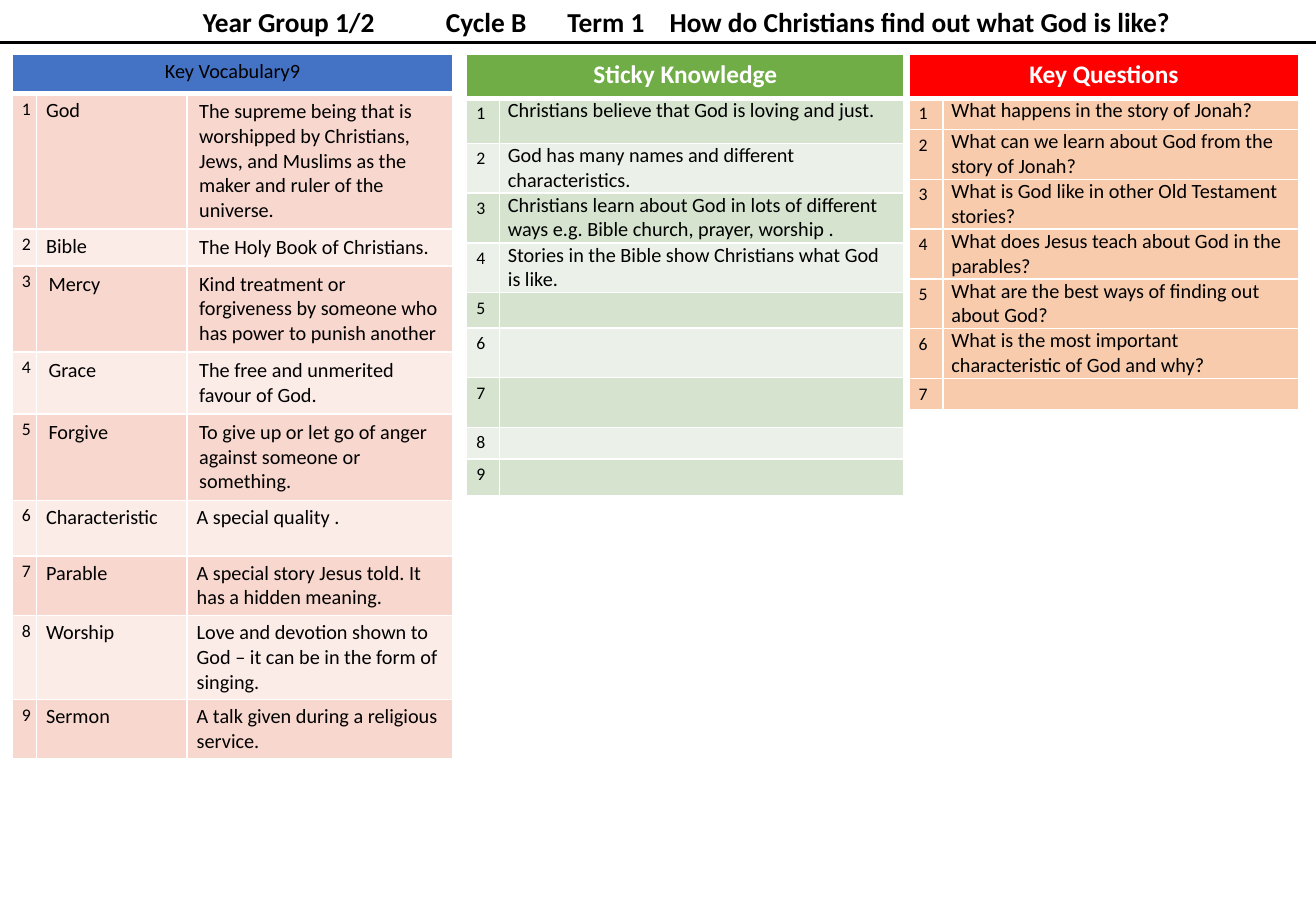
"""Build a knowledge organiser slide with one title and three numbered tables."""
import dataclasses
import itertools

import lxml.etree
import pptx
import pptx.dml.color
import pptx.enum.shapes
import pptx.enum.text
import pptx.oxml.ns
import pptx.util

COLS, ROWS = 1083, 750
LEFT, MID = pptx.enum.text.PP_ALIGN.LEFT, pptx.enum.text.PP_ALIGN.CENTER


@dataclasses.dataclass(frozen=True)
class Theme:
    font: str = "Calibri"
    black: str = "000000"
    white: str = "FFFFFF"
    blue: str = "4472C4"
    green: str = "70AD47"
    red: str = "FF0000"
    pinks: tuple = ("F8D7CE", "FCECE8")
    greens: tuple = ("D5E3CF", "EBF1E9")
    peach: tuple = ("F8CBAD",)
    title: float = 16.2
    head: float = 15
    body: float = 12
    digit: float = 10.5
    rule: float = 1.5
    tight: tuple = (8, 4)
    roomy: tuple = (10, 5)
    flush: tuple = (7, 0)


THEME = Theme()

WORDS = [
    ("God", "The supreme being that is worshipped by Christians, Jews, and "
     "Muslims as the maker and ruler of the universe."),
    ("Bible", "The Holy Book of Christians."),
    ("Mercy", "Kind treatment or forgiveness by someone who has power to punish another"),
    ("Grace", "The free and unmerited favour of God."),
    ("Forgive", "To give up or let go of anger against someone or something."),
    ("Characteristic", "A special quality ."),
    ("Parable", "A special story Jesus told. It has a hidden meaning."),
    ("Worship", "Love and devotion shown to God – it can be in the form of singing."),
    ("Sermon", "A talk given during a religious service."),
]
FACTS = [
    ("Christians believe that God is loving and just.",),
    ("God has many names and different characteristics.",),
    ("Christians learn about God in lots of different ways e.g. Bible church, "
     "prayer, worship .",),
    ("Stories in the Bible show Christians what God is like.",),
] + [("",)] * 5
ASKS = [
    ("What happens in the story of Jonah?",),
    ("What can we learn about God from the story of Jonah?",),
    ("What is God like in other Old Testament stories?",),
    ("What does Jesus teach about God in the parables?",),
    ("What are the best ways of finding out about God?",),
    ("What is the most important characteristic of God and why?",),
    ("",),
]
ROOMY = {(1, 2), (2, 2), *itertools.product((3, 4, 5), (1, 2))}


def grid(count):
    return pptx.util.Inches(count / 100)


def paint(text):
    return pptx.dml.color.RGBColor.from_string(text)


def write(frame, text, size=THEME.body, color=THEME.black, bold=False, align=LEFT):
    line = frame.paragraphs[0]
    line.alignment = align
    if not text:
        line._p.get_or_add_endParaRPr().set("sz", str(int(size * 100)))
        return line
    run = line.add_run()
    run.text = text
    run.font.name = THEME.font
    run.font.size = pptx.util.Pt(size)
    run.font.bold = bold
    run.font.color.rgb = paint(color)
    return line


def edge(cell, base):
    props = cell._tc.get_or_add_tcPr()
    for side, width in (("L", 1), ("R", 1), ("T", 1), ("B", base)):
        line = lxml.etree.SubElement(props, pptx.oxml.ns.qn("a:ln" + side),
                                     w=str(pptx.util.Pt(width)))
        fill = lxml.etree.SubElement(line, pptx.oxml.ns.qn("a:solidFill"))
        lxml.etree.SubElement(fill, pptx.oxml.ns.qn("a:srgbClr"), val=THEME.white)


def style(cell, fill, pad, base=1):
    edge(cell, base)
    cell.fill.solid()
    cell.fill.fore_color.rgb = paint(fill)
    cell.margin_left = cell.margin_right = grid(pad[0])
    cell.margin_top = cell.margin_bottom = grid(pad[1])


def draw_table(slide, left, cols, rows, head, fill, bands, data, pad, roomy=(), **kind):
    shape = slide.shapes.add_table(len(rows), len(cols), grid(left), grid(45),
                                   grid(sum(cols)), grid(sum(rows)))
    table = shape.table
    table.first_row = table.horz_banding = False
    for part, width in zip(table.columns, cols):
        part.width = grid(width)
    for part, height in zip(table.rows, rows):
        part.height = grid(height)
    for col in range(len(cols)):
        style(table.cell(0, col), fill, THEME.tight, base=3)
    table.cell(0, 0).merge(table.cell(0, len(cols) - 1))
    write(table.cell(0, 0).text_frame, head, align=MID, **kind)
    for row, texts in enumerate(data, 1):
        for col, text in enumerate((str(row), *texts)):
            cell = table.cell(row, col)
            inset = THEME.roomy if (row, col) in roomy else pad if col else THEME.tight
            style(cell, bands[(row - 1) % len(bands)], inset)
            write(cell.text_frame, text, size=THEME.body if col and text else THEME.digit)


def draw_title(slide, parts, stops):
    shape = slide.shapes.title
    shape.left, shape.top, shape.width, shape.height = map(grid, (61, 0, 1008, 37))
    frame = shape.text_frame
    frame.auto_size = pptx.enum.text.MSO_AUTO_SIZE.NONE
    frame.word_wrap = True
    frame.vertical_anchor = pptx.enum.text.MSO_ANCHOR.BOTTOM
    frame.margin_left, frame.margin_right = grid(106), 0
    frame.margin_top = frame.margin_bottom = grid(5)
    line = write(frame, "\t".join(parts), size=THEME.title, bold=True)
    line.line_spacing = 0.9
    tabs = lxml.etree.SubElement(line._p.get_or_add_pPr(), pptx.oxml.ns.qn("a:tabLst"))
    for stop in stops:
        lxml.etree.SubElement(tabs, pptx.oxml.ns.qn("a:tab"), pos=str(grid(stop)), algn="l")


def draw_rule(slide, top):
    line = slide.shapes.add_connector(pptx.enum.shapes.MSO_CONNECTOR.STRAIGHT,
                                      0, grid(top), grid(COLS), grid(top))
    line.line.color.rgb = paint(THEME.black)
    line.line.width = pptx.util.Pt(THEME.rule)
    lxml.etree.SubElement(line._element.spPr, pptx.oxml.ns.qn("a:effectLst"))


def main():
    deck = pptx.Presentation()
    deck.slide_width, deck.slide_height = grid(COLS), grid(ROWS)
    slide = deck.slides.add_slide(deck.slide_layouts[5])
    draw_title(slide, ("Year Group 1/2", "Cycle B", "Term 1",
                       "How do Christians find out what God is like?"), (200, 300, 384))
    draw_table(slide, 10, (19, 124, 219), (32, 111, 30, 71, 51, 71, 46, 49, 69, 49),
               "Key Vocabulary9", THEME.blue, THEME.pinks, WORDS, THEME.tight, roomy=ROOMY)
    draw_rule(slide, 35)
    bright = {"size": THEME.head, "color": THEME.white, "bold": True}
    draw_table(slide, 384, (27, 333), (36, 37, 41, 41, 41, 29, 41, 41, 26, 30),
               "Sticky Knowledge", THEME.green, THEME.greens, FACTS, THEME.flush, **bright)
    draw_table(slide, 748, (28, 293), (36, 25, *[41] * 5, 25),
               "Key Questions", THEME.red, THEME.peach, ASKS, THEME.flush, **bright)
    deck.save("out.pptx")


if __name__ == "__main__":
    main()
